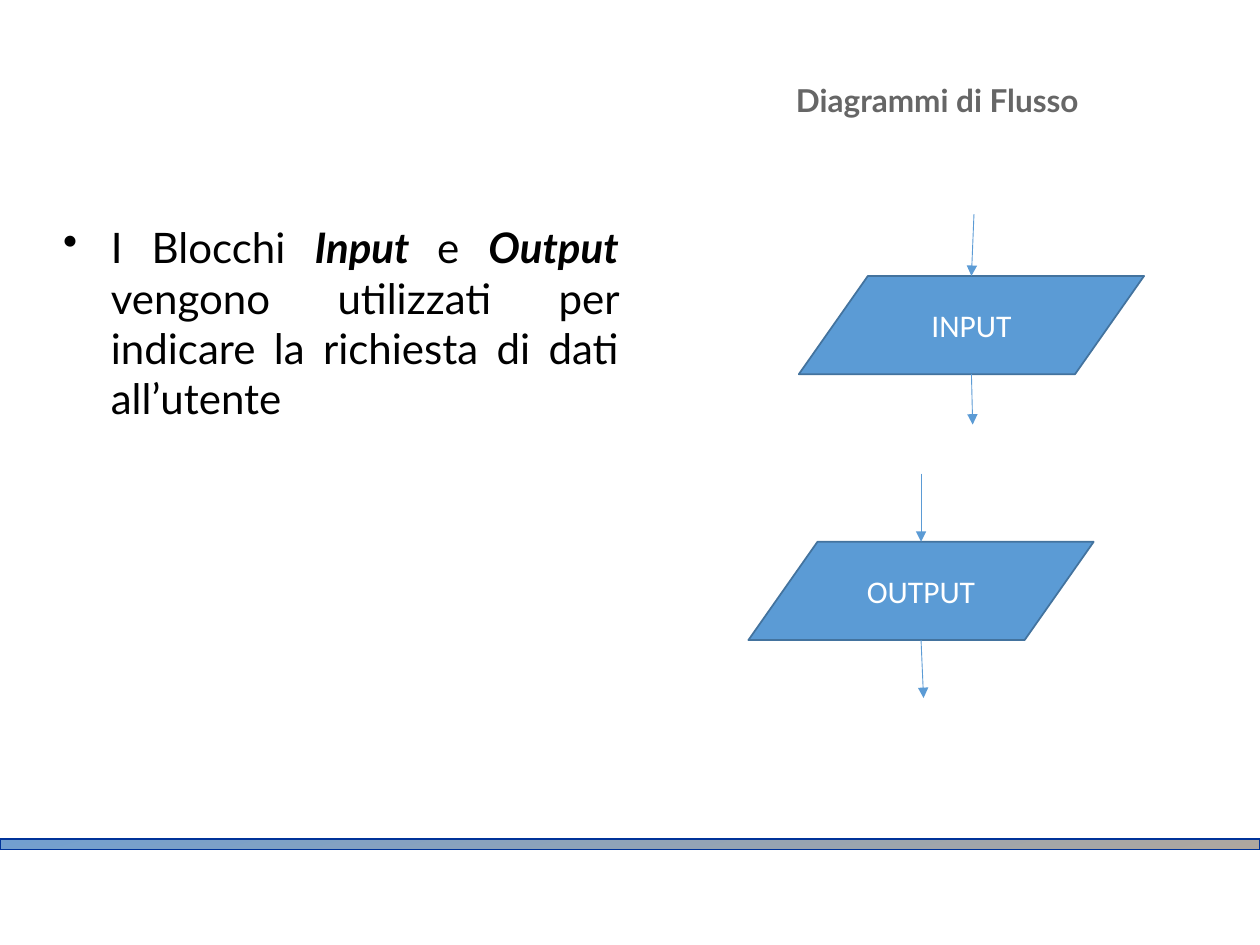
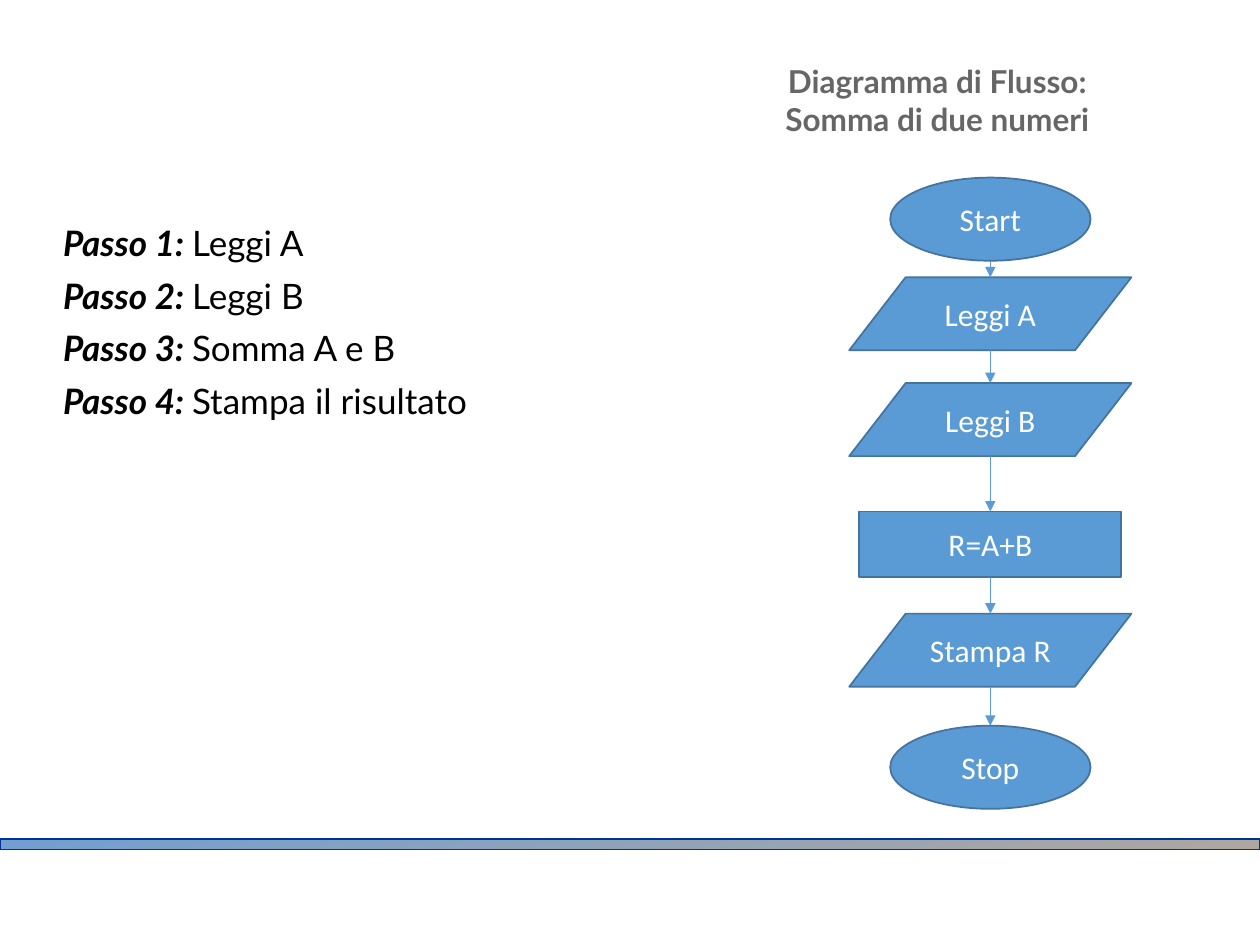
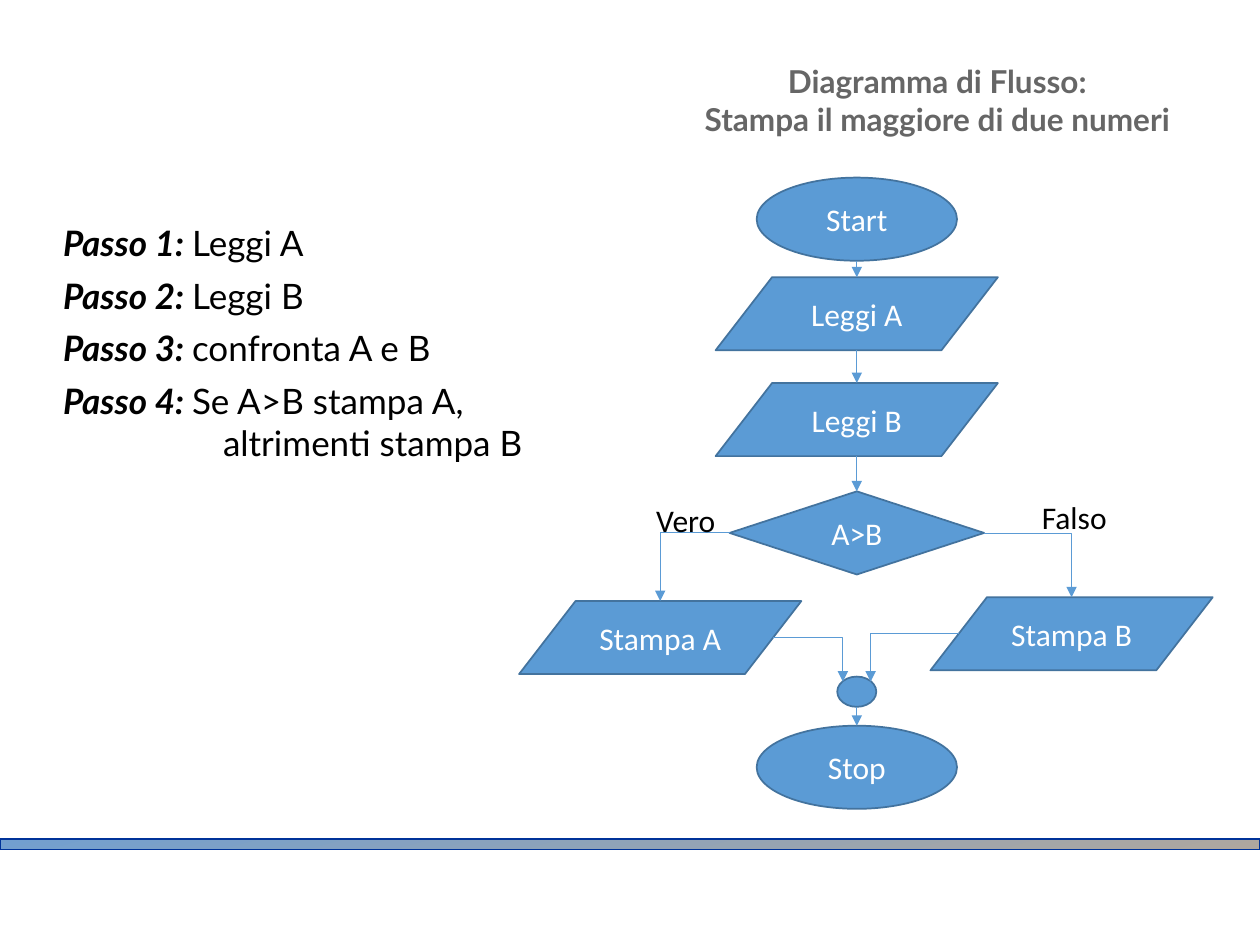
import dataclasses
import itertools

import pptx
import pptx.dml.color
import pptx.enum.dml
import pptx.enum.shapes
import pptx.enum.text
import pptx.oxml.ns
import pptx.util
from lxml import etree

UNIT = pptx.util.Inches(0.1)
COLUMNS, ROWS = 100, 75

BLOCK_FILL = pptx.dml.color.RGBColor(0x5B, 0x9B, 0xD5)
BLOCK_LINE = pptx.dml.color.RGBColor(0x43, 0x73, 0x9E)
BAND_START = pptx.dml.color.RGBColor(0x72, 0x9F, 0xCF)
BAND_END = pptx.dml.color.RGBColor(0xAE, 0xA7, 0x9F)
BAND_LINE = pptx.dml.color.RGBColor(0x00, 0x33, 0x99)
TITLE_COLOR = pptx.dml.color.RGBColor(0x66, 0x66, 0x66)
BLACK = pptx.dml.color.RGBColor(0x00, 0x00, 0x00)
WHITE = pptx.dml.color.RGBColor(0xFF, 0xFF, 0xFF)

TEXT_FONT, BLOCK_FONT = "Lato", "Calibri"
SHAPES = pptx.enum.shapes.MSO_SHAPE
CONNECTORS = pptx.enum.shapes.MSO_CONNECTOR
ALIGN = pptx.enum.text.PP_ALIGN
ANCHOR = pptx.enum.text.MSO_ANCHOR

KINDS = {
    "terminal": (SHAPES.OVAL, 15.9, 6.6),
    "data": (SHAPES.FLOWCHART_DATA, 22.4, 5.8),
    "large data": (SHAPES.FLOWCHART_DATA, 27.4, 7.8),
    "process": (SHAPES.RECTANGLE, 20.8, 5.2),
    "decision": (SHAPES.DIAMOND, 20.2, 6.6),
    "junction": (SHAPES.OVAL, 3.1, 2.4),
}


@dataclasses.dataclass
class Box:
    left: float
    top: float
    width: float
    height: float

    @property
    def center(self):
        return self.left + self.width / 2

    @property
    def middle(self):
        return self.top + self.height / 2

    @property
    def right(self):
        return self.left + self.width

    @property
    def bottom(self):
        return self.top + self.height

    def lengths(self):
        return [round(value * UNIT) for value in (self.left, self.top, self.width, self.height)]


BAND = Box(0, 66.6, COLUMNS, 0.8)
TITLE = Box(51.6, 2.3, 45.6, 11.3)
BODY = Box(5, 17.6, 44.1, 43.5)
CHART_TOP = 14.1


def style_font(paragraph, name, size, color, bold=None):
    font = paragraph.font
    font.name, font.size, font.bold = name, pptx.util.Pt(size), bold
    font.color.rgb = color


def add_text_frame(slide, box, wrap=True):
    frame = slide.shapes.add_textbox(*box.lengths()).text_frame
    frame.word_wrap = wrap
    return frame


def add_band(slide, box):
    band = slide.shapes.add_shape(SHAPES.RECTANGLE, *box.lengths())
    band.shadow.inherit = False
    band.fill.gradient()
    band.fill.gradient_angle = 285
    for stop, color in zip(band.fill.gradient_stops, (BAND_START, BAND_END)):
        stop.color.rgb = color
    band.line.color.rgb = BAND_LINE
    band.line.width = pptx.util.Pt(0.75)


def add_title(slide, box, text):
    frame = add_text_frame(slide, box)
    frame.vertical_anchor = ANCHOR.MIDDLE
    paragraph = frame.paragraphs[0]
    paragraph.text = text
    paragraph.alignment = ALIGN.CENTER
    style_font(paragraph, TEXT_FONT, 18, TITLE_COLOR, True)


def add_body(slide, box, paragraphs, size, indent=0, bullet=None, last_alignment=ALIGN.JUSTIFY):
    frame = add_text_frame(slide, box)
    frame.margin_left = frame.margin_right = frame.margin_top = frame.margin_bottom = 0
    for index, runs in enumerate(paragraphs):
        paragraph = frame.add_paragraph() if index else frame.paragraphs[0]
        paragraph.alignment = last_alignment if index == len(paragraphs) - 1 else ALIGN.JUSTIFY
        if index:
            paragraph.space_before = pptx.util.Pt(6)
        properties = paragraph._p.get_or_add_pPr()
        properties.set("marL", str(round(indent * UNIT)))
        properties.set("indent", str(round(-indent * UNIT)))
        if bullet:
            mark = etree.SubElement(properties, pptx.oxml.ns.qn("a:buChar"))
            mark.set("char", bullet)
        style_font(paragraph, TEXT_FONT, size, BLACK)
        for text, emphasis in runs:
            run = paragraph.add_run()
            run.text = text
            if emphasis:
                run.font.bold = run.font.italic = True


def add_block(slide, kind, center, top, text=""):
    shape_type, width, height = KINDS[kind]
    box = Box(center - width / 2, top, width, height)
    block = slide.shapes.add_shape(shape_type, *box.lengths())
    block.shadow.inherit = False
    block.fill.solid()
    block.fill.fore_color.rgb = BLOCK_FILL
    block.line.color.rgb = BLOCK_LINE
    block.line.width = pptx.util.Pt(1)
    if text:
        block.text_frame.vertical_anchor = ANCHOR.MIDDLE
        paragraph = block.text_frame.paragraphs[0]
        paragraph.text = text
        paragraph.alignment = ALIGN.CENTER
        style_font(paragraph, BLOCK_FONT, 18, WHITE)
    return box


def add_arrow(slide, start, end, bent=False):
    kind = CONNECTORS.ELBOW if bent else CONNECTORS.STRAIGHT
    arrow = slide.shapes.add_connector(kind, *[round(value * UNIT) for value in (*start, *end)])
    properties = arrow._element.spPr
    if bent:
        properties.find(pptx.oxml.ns.qn("a:prstGeom")).set("prst", "bentConnector2")
    arrow.line.color.rgb = BLOCK_FILL
    arrow.line.width = pptx.util.Pt(0.5)
    head = etree.SubElement(arrow.line._get_or_add_ln(), pptx.oxml.ns.qn("a:tailEnd"))
    head.set("type", "triangle")
    etree.SubElement(properties, pptx.oxml.ns.qn("a:effectLst"))


def add_branch_label(slide, box, text):
    paragraph = add_text_frame(slide, box, wrap=False).paragraphs[0]
    paragraph.text = text
    style_font(paragraph, BLOCK_FONT, 18, BLACK)


def add_sequence(slide, center, top, steps):
    boxes = [add_block(slide, kind, center, top + offset, text) for kind, offset, text in steps]
    for upper, lower in itertools.pairwise(boxes):
        add_arrow(slide, (upper.center, upper.bottom), (lower.center, lower.top))
    return boxes


def add_single_block(slide, center, top, text, entry, leaving):
    box = add_block(slide, "large data", center, top, text)
    add_arrow(slide, (center + entry[0], top - entry[1]), (center, top))
    add_arrow(slide, (center, box.bottom), (center + leaving[0], box.bottom + leaving[1]))


def add_decision_chart(slide, center, top):
    *_, decision = add_sequence(slide, center, top, [
        ("terminal", 0, "Start"),
        ("data", 7.9, "Leggi A"),
        ("data", 16.3, "Leggi B"),
        ("decision", 24.9, "A>B"),
    ])
    junction, _ = add_sequence(slide, center, top, [("junction", 39.6, ""), ("terminal", 43.5, "Stop")])
    skew = KINDS["data"][1] / 10
    branches = [
        (-1, "Stampa A", -15.6, 33.6, "Vero", Box(center - 16.9, top + 25.2, 6.8, 4)),
        (1, "Stampa B", 17.05, 33.3, "Falso", Box(center + 13.7, top + 24.9, 7.2, 4)),
    ]
    for side, text, shift, offset, label, label_box in branches:
        block = add_block(slide, "data", center + shift, top + offset, text)
        corner = decision.right if side > 0 else decision.left
        add_arrow(slide, (corner, decision.middle), (block.center, block.top), bent=True)
        inner_edge = block.left + skew if side > 0 else block.right - skew
        add_arrow(slide, (inner_edge, block.middle), (center + side * 1.1, junction.top + 0.4), bent=True)
        add_branch_label(slide, label_box, label)


def add_slide(presentation, title):
    slide = presentation.slides.add_slide(presentation.slide_layouts[6])
    add_band(slide, BAND)
    add_title(slide, TITLE, title)
    return slide


def numbered_steps(*texts):
    return [[(f"Passo {number}: ", True), (text, False)] for number, text in enumerate(texts, 1)]


def build_blocks_slide(presentation):
    slide = add_slide(presentation, "Diagrammi di Flusso")
    add_body(slide, BODY, [[
        ("I Blocchi ", False),
        ("Input ", True),
        ("e ", False),
        ("Output ", True),
        ("vengono utilizzati per indicare la richiesta di dati all’utente", False),
    ]], 24, 3.8, "•")
    add_single_block(slide, 77.1, 21.9, "INPUT", (0.2, 4.9), (0.1, 4))
    add_single_block(slide, 73.1, 43, "OUTPUT", (0, 5.4), (0.2, 4.6))


def build_sum_slide(presentation):
    slide = add_slide(presentation, "Diagramma di Flusso:\vSomma di due numeri")
    add_body(slide, BODY, numbered_steps("Leggi A", "Leggi B", "Somma A e B", "Stampa il risultato"), 20)
    add_sequence(slide, 78.6, CHART_TOP, [
        ("terminal", 0, "Start"),
        ("data", 7.9, "Leggi A"),
        ("data", 16.3, "Leggi B"),
        ("process", 26.5, "R=A+B"),
        ("data", 34.6, "Stampa R"),
        ("terminal", 43.5, "Stop"),
    ])


def build_maximum_slide(presentation):
    slide = add_slide(presentation, "Diagramma di Flusso:\vStampa il maggiore di due numeri")
    steps = numbered_steps("Leggi A", "Leggi B", "confronta A e B", "Se A>B stampa A, altrimenti stampa B")
    add_body(slide, BODY, steps, 20, 12.7, last_alignment=ALIGN.LEFT)
    add_decision_chart(slide, 68, CHART_TOP)


def main():
    presentation = pptx.Presentation()
    presentation.slide_width = COLUMNS * UNIT
    presentation.slide_height = ROWS * UNIT
    build_blocks_slide(presentation)
    build_sum_slide(presentation)
    build_maximum_slide(presentation)
    presentation.save("out.pptx")


if __name__ == "__main__":
    main()
